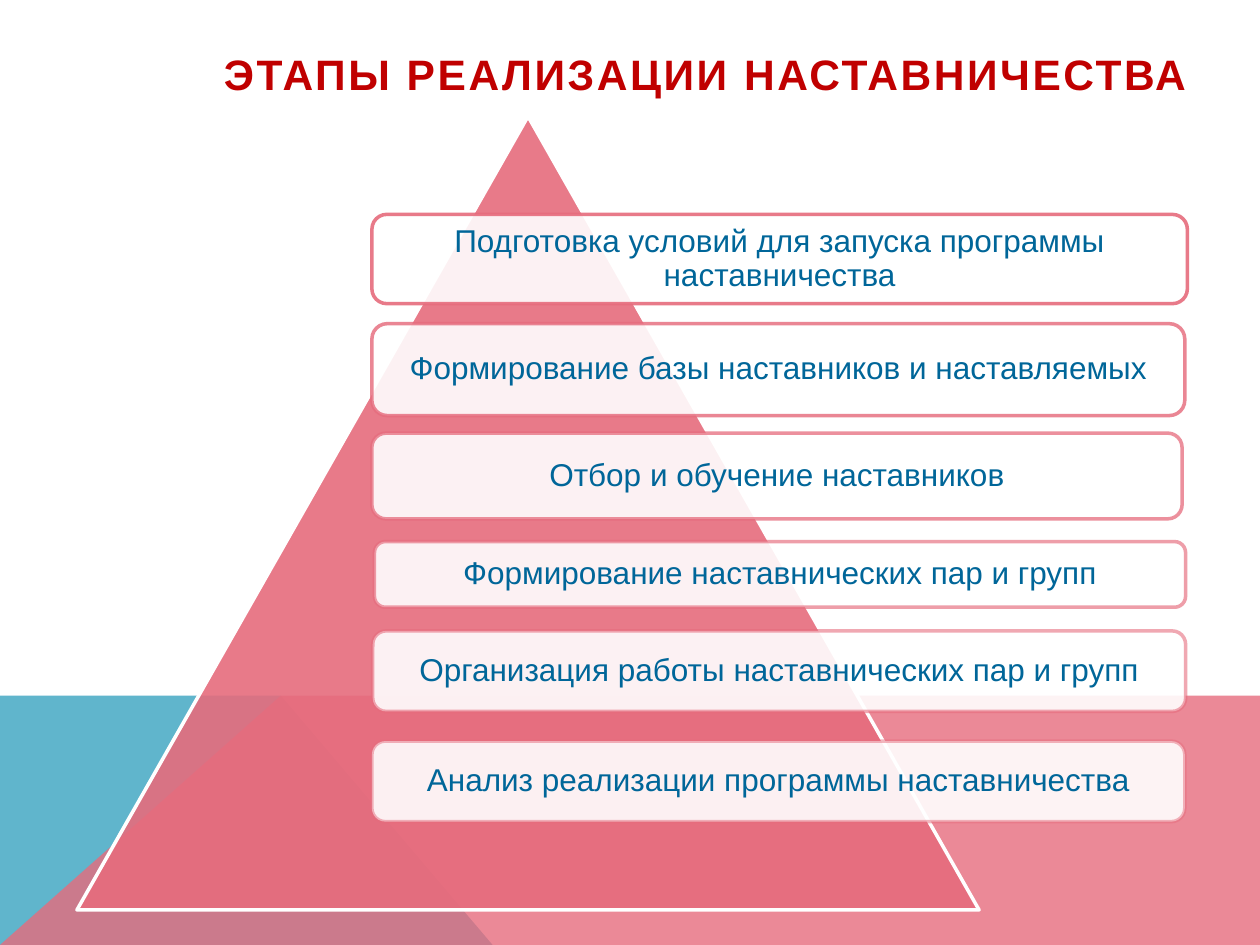
from dataclasses import dataclass

from lxml.etree import SubElement
from pptx import Presentation
from pptx.dml.color import RGBColor
from pptx.enum.shapes import MSO_SHAPE
from pptx.enum.text import MSO_ANCHOR, MSO_AUTO_SIZE, PP_ALIGN
from pptx.oxml.ns import qn
from pptx.util import Pt


@dataclass(frozen=True)
class Theme:
    font: str = "Arial"
    title_size: float = 24.3
    stage_size: float = 18
    title: str = "C00000"
    text: str = "006699"
    rose: str = "E66C7D"
    blue: str = "60B5CC"
    white: str = "FFFFFF"


class SlideBuilder:
    def __init__(self, slide, theme):
        self.slide = slide
        self.theme = theme

    def paint(self, fill_format, color, opacity=100):
        """Apply a solid colour, with opacity in percent."""
        fill_format.solid()
        fill_format.fore_color.rgb = RGBColor.from_string(color)
        if opacity < 100:
            for color_element in fill_format._xPr.iter(qn("a:srgbClr")):
                alpha = SubElement(color_element, qn("a:alpha"))
                alpha.set("val", str(opacity * 1000))

    def format_text(self, paragraph, size, color, bold=False):
        for run in paragraph.runs:
            run.font.name = self.theme.font
            run.font.size = Pt(size)
            run.font.bold = bold
            run.font.color.rgb = RGBColor.from_string(color)

    def title(self, text, left, top, width, height):
        shape = self.slide.shapes.title
        shape.left, shape.top, shape.width, shape.height = map(Pt, (left, top, width, height))
        frame = shape.text_frame
        frame.text = text
        frame.auto_size = MSO_AUTO_SIZE.NONE
        frame.vertical_anchor = MSO_ANCHOR.TOP
        frame.margin_left, frame.margin_top, frame.margin_right = Pt(80), Pt(18), 0
        paragraph = frame.paragraphs[0]
        paragraph.alignment = PP_ALIGN.LEFT
        self.format_text(paragraph, self.theme.title_size, self.theme.title, bold=True)
        for run in paragraph.runs:
            run.font._rPr.set("spc", "150")

    def band(self, points, color, opacity=100):
        start, *rest = [(Pt(x), Pt(y)) for x, y in points]
        builder = self.slide.shapes.build_freeform(*start)
        builder.add_line_segments(rest, close=True)
        shape = builder.convert_to_shape()
        shape.shadow.inherit = False
        self.paint(shape.fill, color, opacity)
        shape.line.fill.background()

    def panel(self, kind, box, fill, line, line_opacity=100):
        shape = self.slide.shapes.add_shape(kind, *map(Pt, box))
        shape.shadow.inherit = False
        self.paint(shape.fill, fill, 90)
        shape.line.width = Pt(2)
        self.paint(shape.line.fill, line, line_opacity)
        return shape

    def pyramid(self, *box):
        self.panel(MSO_SHAPE.ISOSCELES_TRIANGLE, box, self.theme.rose, self.theme.white)

    def stage(self, text, box, line_opacity):
        shape = self.panel(MSO_SHAPE.ROUNDED_RECTANGLE, box,
                           self.theme.white, self.theme.rose, line_opacity)
        frame = shape.text_frame
        frame.text = text
        frame.word_wrap = True
        frame.vertical_anchor = MSO_ANCHOR.MIDDLE
        frame.margin_left = frame.margin_right = Pt(7.5)
        frame.margin_top = frame.margin_bottom = Pt(5)
        paragraph = frame.paragraphs[0]
        paragraph.alignment = PP_ALIGN.CENTER
        paragraph.line_spacing = 0.9
        self.format_text(paragraph, self.theme.stage_size, self.theme.text)


STAGES = [
    ("Подготовка условий для запуска программы наставничества", (212.5, 122.5, 466, 51)),
    ("Формирование базы наставников и наставляемых", (212.5, 185, 464.5, 52.5)),
    ("Отбор и обучение наставников", (212.5, 247.5, 463, 49)),
    ("Формирование наставнических пар и групп", (214, 309.5, 463.5, 37.5)),
    ("Организация работы наставнических пар и групп", (213, 360.5, 464.5, 46)),
    ("Анализ реализации программы наставничества", (212.5, 423.5, 464.5, 46)),
]


def main():
    presentation = Presentation()
    width, height = 720, 540
    presentation.slide_width, presentation.slide_height = Pt(width), Pt(height)
    slide = presentation.slides.add_slide(presentation.slide_layouts[5])
    theme = Theme()
    builder = SlideBuilder(slide, theme)

    horizon, peak = 397.5, 160.5
    builder.band([(0, height), (0, horizon), (peak, horizon), (281.5, height)], theme.blue)
    builder.band([(0, height), (peak, horizon), (width, horizon), (width, height)],
                 theme.rose, 80)
    builder.title("ЭТАПЫ РЕАЛИЗАЦИИ НАСТАВНИЧЕСТВА", 48, 9.5, 655, 108)
    builder.pyramid(44, 66.5, 515.5, 453.5)
    for index, (text, box) in enumerate(STAGES):
        builder.stage(text, box, line_opacity=90 - 8 * index)

    presentation.save("out.pptx")


if __name__ == "__main__":
    main()
